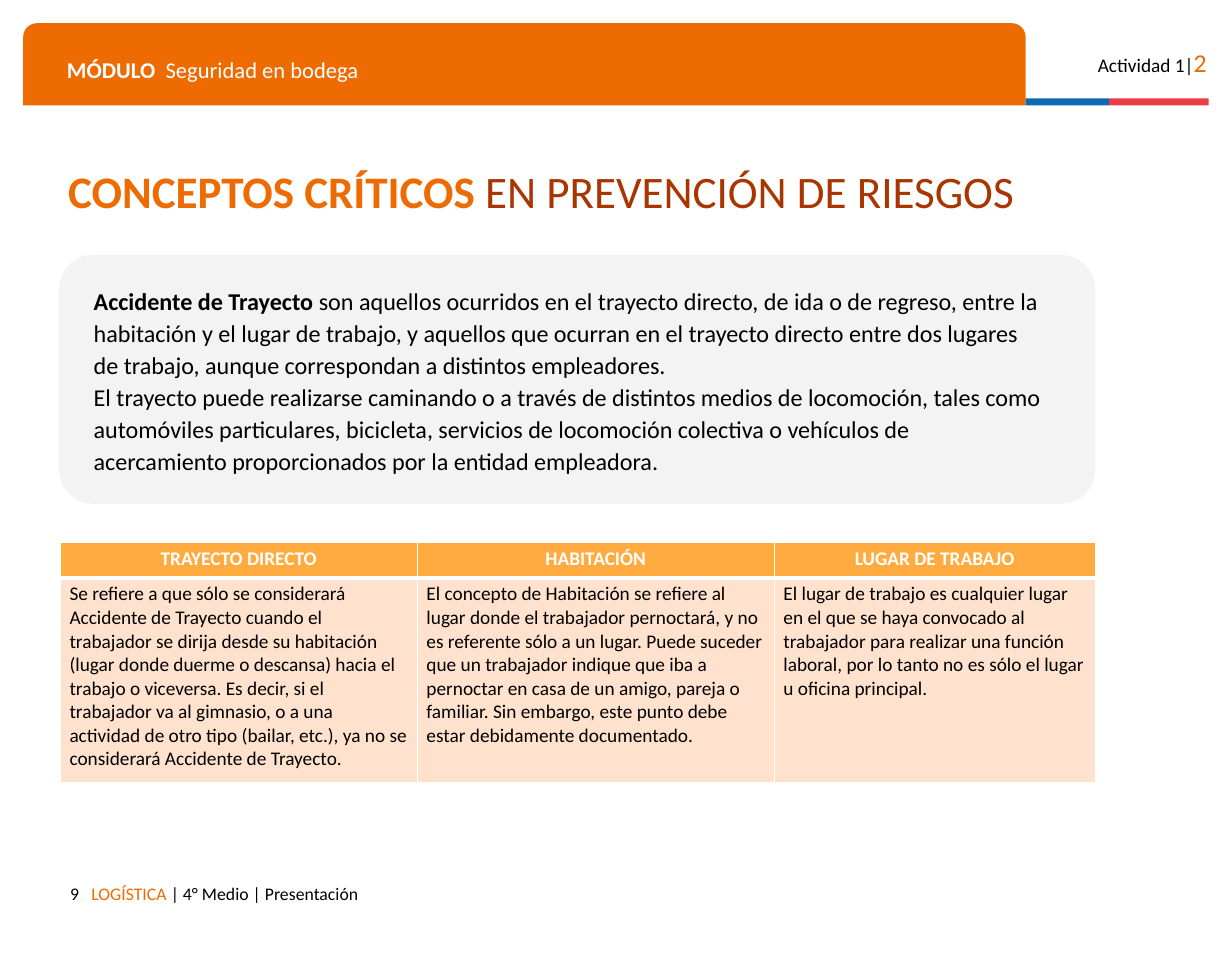
import pptx
import pptx.dml.color
import pptx.enum.shapes
import pptx.enum.text
import pptx.oxml
import pptx.oxml.ns
import pptx.util

Inches, Pt = pptx.util.Inches, pptx.util.Pt
Align, Anchor = pptx.enum.text.PP_ALIGN, pptx.enum.text.MSO_ANCHOR
Preset = pptx.enum.shapes.MSO_SHAPE

COLORS = {
    "orange": "ED6B00", "rust": "A93501", "blue": "0F69B4", "red": "EB3C46",
    "panel": "F3F3F3", "header": "FFAB40", "body": "FFE2CD",
    "black": "000000", "white": "FFFFFF",
}
FONT = "Calibri"
WIDTH, HEIGHT = 10.63, 8.27
MARGIN = 0.2

# Content: each run is (text, color, bold, size)
TITLE = [[("CONCEPTOS CRÍTICOS ", "orange", True, 28),
          ("EN PREVENCIÓN DE RIESGOS", "rust", False, 28)]]
DEFINITION = [
    [("Accidente de Trayecto ", "black", True, 15),
     ("son aquellos ocurridos en el trayecto directo, de ida o de regreso, entre la "
      "habitación y el lugar de trabajo, y aquellos que ocurran en el trayecto directo "
      "entre dos lugares de trabajo, aunque correspondan a distintos empleadores.",
      "black", False, 15)],
    [("El trayecto puede realizarse caminando o a través de distintos medios de "
      "locomoción, tales como automóviles particulares, bicicleta, servicios de "
      "locomoción colectiva o vehículos de acercamiento proporcionados por la entidad "
      "empleadora.", "black", False, 15)],
]
MODULE_LABEL = [[("MÓDULO", "white", True, 14)]]
MODULE_NAME = [[("Seguridad en bodega", "white", False, 14)]]
ACTIVITY = [[("Actividad 1|", "black", False, 12), ("2", "orange", False, 16)]]
PAGE_NUMBER = [[("9", "black", False, 11)]]
FOOTER = [[("LOGÍSTICA ", "orange", False, 11),
           ("| 4° Medio | Presentación", "black", False, 11)]]
CONCEPTS = {
    "TRAYECTO DIRECTO":
        "Se refiere a que sólo se considerará Accidente de Trayecto cuando el trabajador "
        "se dirija desde su habitación (lugar donde duerme o descansa) hacia el trabajo o "
        "viceversa. Es decir, si el trabajador va al gimnasio, o a una actividad de otro "
        "tipo (bailar, etc.), ya no se considerará Accidente de Trayecto.",
    "HABITACIÓN":
        "El concepto de Habitación se refiere al lugar donde el trabajador pernoctará, y "
        "no es referente sólo a un lugar. Puede suceder que un trabajador indique que iba "
        "a pernoctar en casa de un amigo, pareja o familiar. Sin embargo, este punto debe "
        "estar debidamente documentado.",
    "LUGAR DE TRABAJO":
        "El lugar de trabajo es cualquier lugar en el que se haya convocado al trabajador "
        "para realizar una función laboral, por lo tanto no es sólo el lugar u oficina "
        "principal.",
}
COLUMN_WIDTHS = [3.08, 3.08, 2.77]
ROW_HEIGHTS = [0.31, 1.77]


def rgb(name):
    return pptx.dml.color.RGBColor.from_string(COLORS[name])


def add_block(slide, preset, box, color, adjustments=()):
    shape = slide.shapes.add_shape(preset, *map(Inches, box))
    for index, value in enumerate(adjustments):
        shape.adjustments[index] = value
    shape.fill.solid()
    shape.fill.fore_color.rgb = rgb(color)
    shape.line.fill.background()
    shape.shadow.inherit = False


def add_text(slide, box, paragraphs, align=Align.LEFT, anchor=Anchor.TOP, spacing=1.0):
    frame = slide.shapes.add_textbox(*map(Inches, box)).text_frame
    frame.word_wrap = True
    frame.vertical_anchor = anchor
    frame.margin_left = frame.margin_right = Inches(0.1)
    frame.margin_top = frame.margin_bottom = Inches(0.1)
    for index, runs in enumerate(paragraphs):
        paragraph = frame.add_paragraph() if index else frame.paragraphs[0]
        paragraph.alignment = align
        paragraph.line_spacing = spacing
        paragraph.font.name = FONT
        for text, color, bold, size in runs:
            run = paragraph.add_run()
            run.text = text
            run.font.name = FONT
            run.font.size = Pt(size)
            run.font.bold = bold
            run.font.color.rgb = rgb(color)


def set_borders(cell, widths):
    """Draw white borders; they must precede the fill in the cell properties."""
    properties = cell._tc.get_or_add_tcPr()
    for index, (side, width) in enumerate(widths.items()):
        properties.insert(index, pptx.oxml.parse_xml(
            f'<a:{side} {pptx.oxml.ns.nsdecls("a")} w="{Pt(width)}"><a:solidFill>'
            f'<a:srgbClr val="{COLORS["white"]}"/></a:solidFill></a:{side}>'))


def add_concepts(slide, left, top):
    table = slide.shapes.add_table(
        len(ROW_HEIGHTS), len(COLUMN_WIDTHS), Inches(left), Inches(top),
        Inches(sum(COLUMN_WIDTHS)), Inches(sum(ROW_HEIGHTS))).table
    for column, width in zip(table.columns, COLUMN_WIDTHS):
        column.width = Inches(width)
    for row, height in zip(table.rows, ROW_HEIGHTS):
        row.height = Inches(height)
    for row_index, texts in enumerate((CONCEPTS.keys(), CONCEPTS.values())):
        is_header = row_index == 0
        for column_index, text in enumerate(texts):
            cell = table.cell(row_index, column_index)
            cell.text = text
            cell.margin_left = cell.margin_right = Inches(0.08)
            cell.margin_top = cell.margin_bottom = Inches(0.04)
            cell.fill.solid()
            cell.fill.fore_color.rgb = rgb("header" if is_header else "body")
            divider = 3
            set_borders(cell, {"lnL": 1, "lnR": 1,
                               "lnT": 1 if is_header else divider,
                               "lnB": divider if is_header else 1})
            paragraph = cell.text_frame.paragraphs[0]
            paragraph.alignment = Align.CENTER if is_header else Align.LEFT
            paragraph.font.name = FONT
            paragraph.font.size = Pt(12)
            paragraph.font.bold = is_header
            paragraph.font.color.rgb = rgb("white" if is_header else "black")


def main():
    presentation = pptx.Presentation()
    presentation.slide_width = Inches(WIDTH)
    presentation.slide_height = Inches(HEIGHT)
    slide = presentation.slides.add_slide(presentation.slide_layouts[6])

    # Header band and the two stripes that continue its lower edge
    band_width, band_height, stripe = 8.65, 0.71, 0.06
    band_right, band_bottom = MARGIN + band_width, MARGIN + band_height
    add_block(slide, Preset.ROUND_2_SAME_RECTANGLE,
              (MARGIN, MARGIN, band_width, band_height), "orange", (0.167, 0))
    left = band_right
    for color, width in (("blue", 0.72), ("red", 0.86)):
        add_block(slide, Preset.RECTANGLE,
                  (left, band_bottom - stripe, width, stripe), color)
        left += width
    add_text(slide, (0.48, 0.38, 1.1, 0.35), MODULE_LABEL)
    add_text(slide, (1.33, 0.38, 7.29, 0.35), MODULE_NAME)
    add_text(slide, (9.23, 0.3, 1.28, 0.38), ACTIVITY, Align.RIGHT)

    # Title
    add_text(slide, (0.49, 1.51, 9.79, 0.35), TITLE, anchor=Anchor.MIDDLE, spacing=0.8)

    # Definition panel
    panel_left, panel_top, panel_width, panel_height = 0.51, 2.2, 8.94, 2.15
    add_block(slide, Preset.ROUNDED_RECTANGLE,
              (panel_left, panel_top, panel_width, panel_height), "panel", (0.138,))
    add_text(slide, (panel_left + MARGIN, panel_top, 8.38, panel_height),
             DEFINITION, anchor=Anchor.MIDDLE, spacing=1.1)

    # Concept table
    add_concepts(slide, 0.52, 4.68)

    # Footer
    add_text(slide, (MARGIN, 7.53, 0.58, 0.29), PAGE_NUMBER, Align.RIGHT)
    add_text(slide, (0.69, 7.53, 7.14, 0.38), FOOTER)

    presentation.save("out.pptx")


if __name__ == "__main__":
    main()
